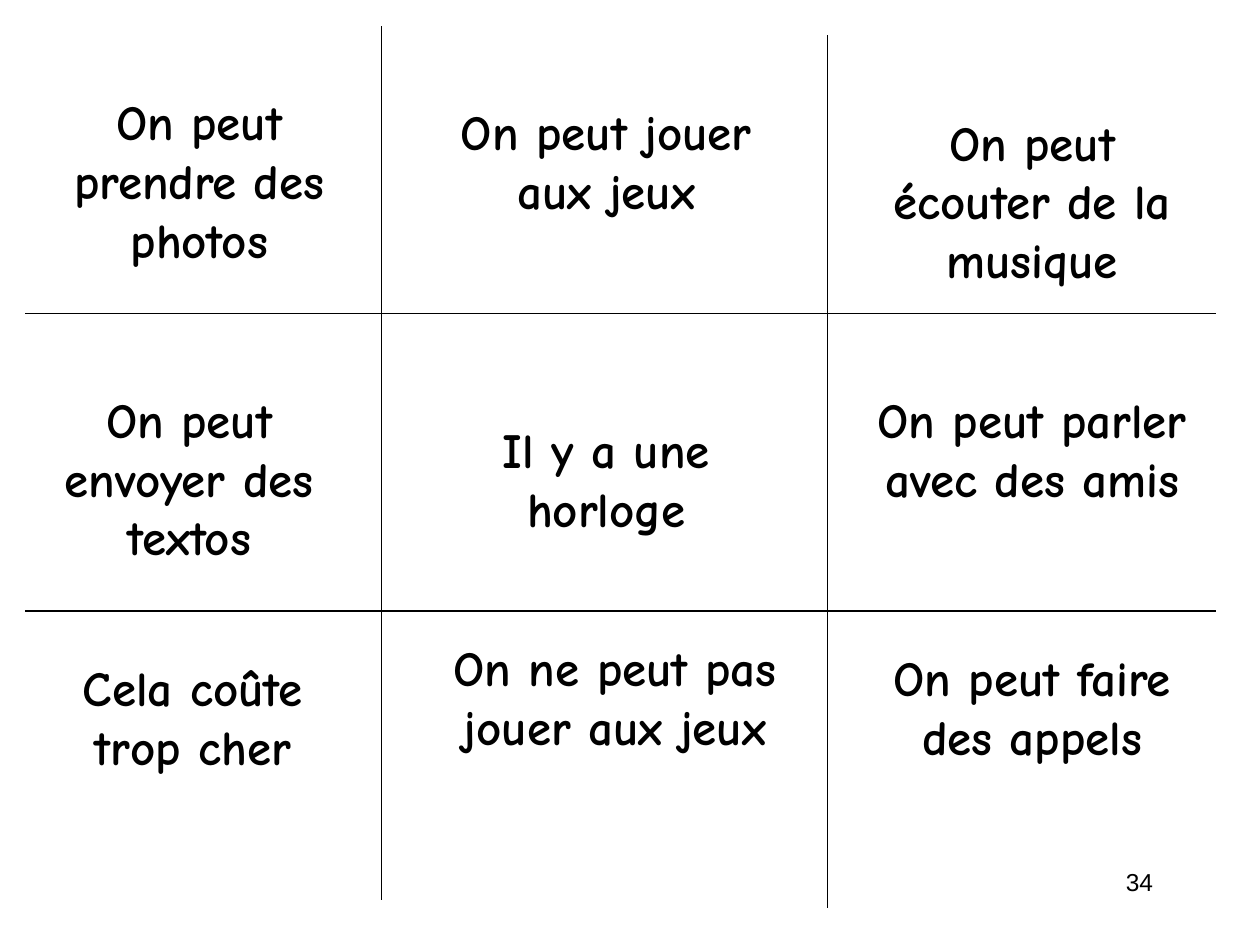
from pptx import Presentation
from pptx.dml.color import RGBColor
from pptx.enum import shapes, text
from pptx.util import Pt
from lxml import etree

BLACK = "000000"
A = "http://schemas.openxmlformats.org/drawingml/2006/main"

# Each card: wording, left, top, width, height in points
CARDS = [
    ("On peut prendre des photos", 14.4, 49, 199, 109),
    ("On peut jouer aux jeux", 247, 54.7, 199, 109),
    ("On peut écouter de la musique", 490.3, 60.5, 199, 109),
    ("On peut envoyer des textos", 8.6, 218.9, 199, 109),
    ("Il y a une horloge", 247, 236.2, 199, 75),
    ("On peut parler avec des amis", 490.3, 218.9, 199, 109),
    ("Cela coûte trop cher", 25.2, 372.2, 170, 75),
    ("On ne peut pas jouer aux jeux", 252, 360.7, 199, 109),
    ("On peut faire des appels", 490.3, 366.5, 199, 109),
]


def color(value):
    return RGBColor.from_string(value)


def add_line(s, x1, y1, x2, y2):
    line = s.shapes.add_connector(
        shapes.MSO_CONNECTOR.STRAIGHT, Pt(x1), Pt(y1), Pt(x2), Pt(y2))
    line.line.color.rgb = color(BLACK)
    line.line.width = Pt(0.75)
    etree.SubElement(line._element.spPr, f"{{{A}}}effectLst")


def add_text(s, words, box, font, size, align, bold=False):
    sp = s.shapes.add_textbox(*(Pt(v) for v in box))
    tf = sp.text_frame
    tf.word_wrap = True
    p = tf.paragraphs[0]
    p.text = words
    p.alignment = align
    p.font.name = font
    p.font.size = Pt(size)
    p.font.bold = bold
    p.font.color.rgb = color(BLACK)


def add_grid(s, left, top, width, height):
    # Two full-width rules, and two columns rules of equal length
    for y in (179.3, 349.2):
        add_line(s, left, y, left + width, y)
    for x, drop in ((218.2, 0), (473, 5)):
        add_line(s, x, top + drop, x, top + drop + height)


def add_cards(s):
    for words, *box in CARDS:
        add_text(s, words, box, "Comic Neue", 28, text.PP_ALIGN.CENTER, bold=True)


def add_page_number(s, box):
    add_text(s, "34", box, "Arial", 14, text.PP_ALIGN.RIGHT)


def main():
    prs = Presentation()
    prs.slide_width, prs.slide_height = Pt(720), Pt(540)
    s = prs.slides.add_slide(prs.slide_layouts[6])
    add_grid(s, 14.4, 15.1, 680.4, 499)
    add_cards(s)
    add_page_number(s, (516.2, 491.8, 149.8, 36))
    prs.save("out.pptx")


if __name__ == "__main__":
    main()
